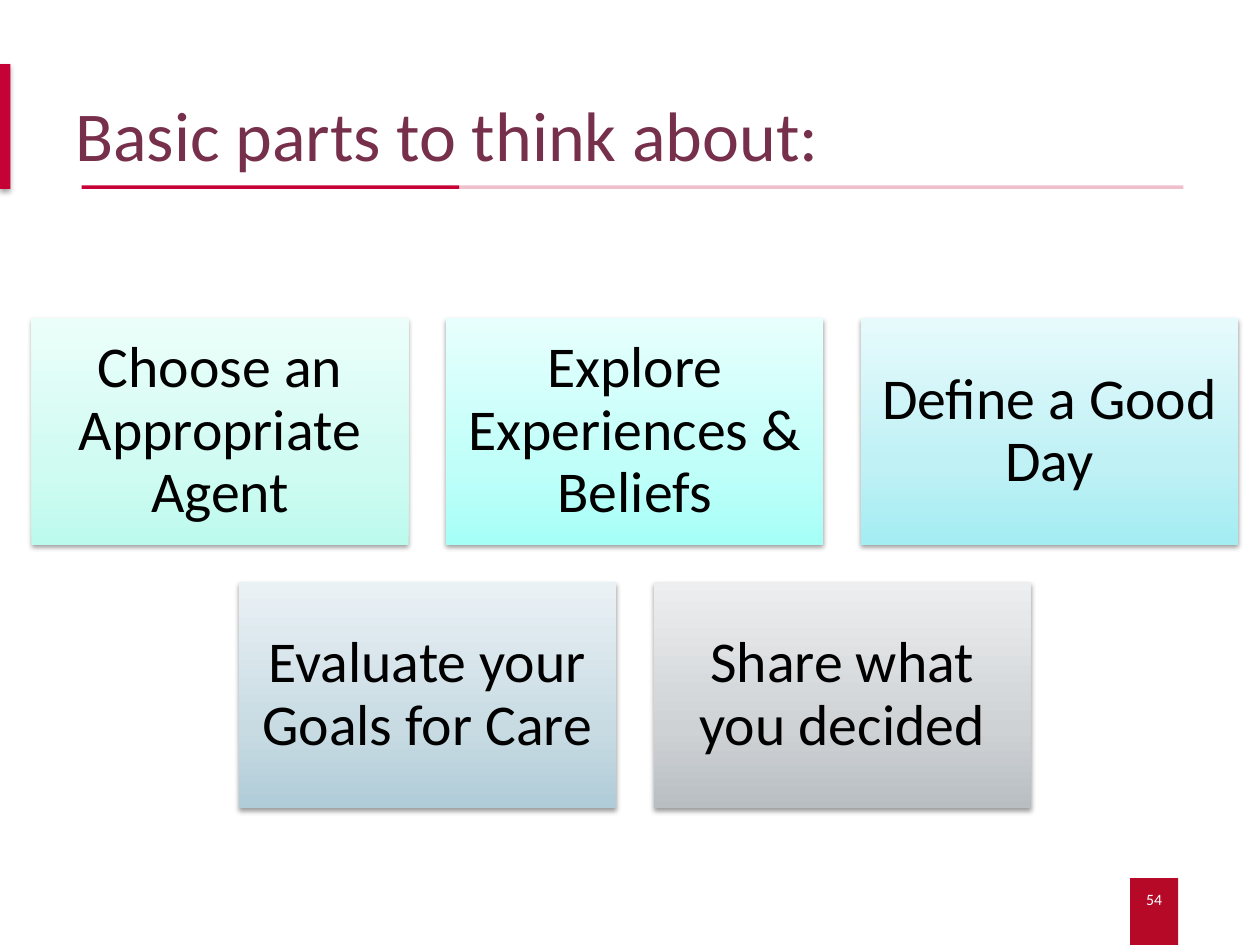
from pptx import Presentation
from pptx.util import Pt
from pptx.dml.color import RGBColor as RGB
from pptx.enum.shapes import MSO_SHAPE as Shape
from pptx.enum.text import PP_ALIGN as Align, MSO_ANCHOR as Anchor
from pptx.oxml import parse_xml as parse
from pptx.oxml.ns import qn, nsdecls

HUES = {
    "page": "B60927",
    "rule": "C60136",
    "title": "77304C",
    "white": "FFFFFF",
    "black": "000000",
}

CARDS = [
    [
        ("Choose an Appropriate Agent", ("BDFAEE", "D0FBF2", "ECFEFA")),
        ("Explore Experiences & Beliefs", ("A6FFF7", "C0FFF9", "E7FFFD")),
        ("Define a Good Day", ("A3EDF3", "BFF1F5", "E6FAFC")),
    ],
    [
        ("Evaluate your Goals for Care", ("AFCCD8", "C8DBE3", "EAF1F5")),
        ("Share what you decided", ("B9BEC3", "CED2D5", "EDEEEF")),
    ],
]


def write(frame, text, size=33, hue="black", align=Align.CENTER,
          anchor=Anchor.MIDDLE, pad=(10, 10), lead=0.9):
    frame.word_wrap = True
    frame.vertical_anchor = anchor
    frame.margin_left = frame.margin_right = Pt(pad[0])
    frame.margin_top = frame.margin_bottom = Pt(pad[1])
    para = frame.paragraphs[0]
    para.alignment = align
    para.line_spacing = lead
    run = para.add_run()
    run.text = text
    run.font.name = "Calibri"
    run.font.size = Pt(size)
    run.font.color.rgb = RGB.from_string(HUES[hue])


class Deck:
    def __init__(self):
        self.show = Presentation()
        self.show.slide_width = Pt(720)
        self.show.slide_height = Pt(540)
        self.slide = self.show.slides.add_slide(self.show.slide_layouts[6])

    def rect(self, left, top, width, height):
        box = self.slide.shapes.add_shape(
            Shape.RECTANGLE, Pt(left), Pt(top), Pt(width), Pt(height))
        box.shadow.inherit = False
        box.line.fill.background()
        return box

    def bar(self, *place, hue="rule", alpha=100):
        box = self.rect(*place)
        box.fill.solid()
        box.fill.fore_color.rgb = RGB.from_string(HUES[hue])
        if alpha < 100:
            color = box._element.spPr.find(qn("a:solidFill"))[0]
            color.append(parse(
                f'<a:alpha {nsdecls("a")} val="{alpha * 1000}"/>'))
        return box

    def shade(self, box, alpha, drop):
        box._element.spPr.find(qn("a:effectLst")).append(parse(
            f'<a:outerShdw {nsdecls("a")} blurRad="{Pt(3.1)}" '
            f'dist="{Pt(drop)}" dir="5400000" rotWithShape="0">'
            f'<a:srgbClr val="{HUES["black"]}">'
            f'<a:alpha val="{alpha * 1000}"/></a:srgbClr></a:outerShdw>'))

    def card(self, text, tones, *place):
        box = self.rect(*place)
        box.fill.gradient()
        box.fill.gradient_angle = 90
        stops = box._element.spPr.find(qn("a:gradFill")).find(qn("a:gsLst"))
        for stop in list(stops):
            stops.remove(stop)
        for spot, tone in zip((0, 35, 100), tones):
            stops.append(parse(
                f'<a:gs {nsdecls("a")} pos="{spot * 1000}">'
                f'<a:srgbClr val="{tone}"/></a:gs>'))
        self.shade(box, 38, 1.6)
        write(box.text_frame, text)

    def text(self, text, *place, **look):
        box = self.slide.shapes.add_textbox(*map(Pt, place))
        write(box.text_frame, text, **look)

    def grid(self, rows, left, top, width, height, gap):
        most = max(map(len, rows))
        for i, row in enumerate(rows):
            start = left + (most - len(row)) * (width + gap) / 2
            for j, (text, tones) in enumerate(row):
                self.card(text, tones, start + j * (width + gap),
                          top + i * (height + gap), width, height)


def main():
    deck = Deck()
    deck.bar(645.8, 501.8, 27.4, 38.2, hue="page")
    deck.shade(deck.bar(0, 36.7, 6, 71.3), 35, 1.8)
    deck.bar(46.6, 105.9, 215.8, 2.1)
    deck.bar(262.4, 105.9, 413.8, 2.1, alpha=25)
    deck.text("54", 646.6, 508.3, 25.9, 10.8, size=9, hue="white",
              anchor=Anchor.TOP, pad=(0, 0), lead=1)
    deck.grid(CARDS, 18, 182, 215.5, 129.2, 21.5)
    deck.text("Basic parts to think about:", 36, 54, 620.6, 50.4, size=40,
              hue="title", align=Align.LEFT, pad=(7.2, 3.6))
    deck.show.save("out.pptx")


if __name__ == "__main__":
    main()
